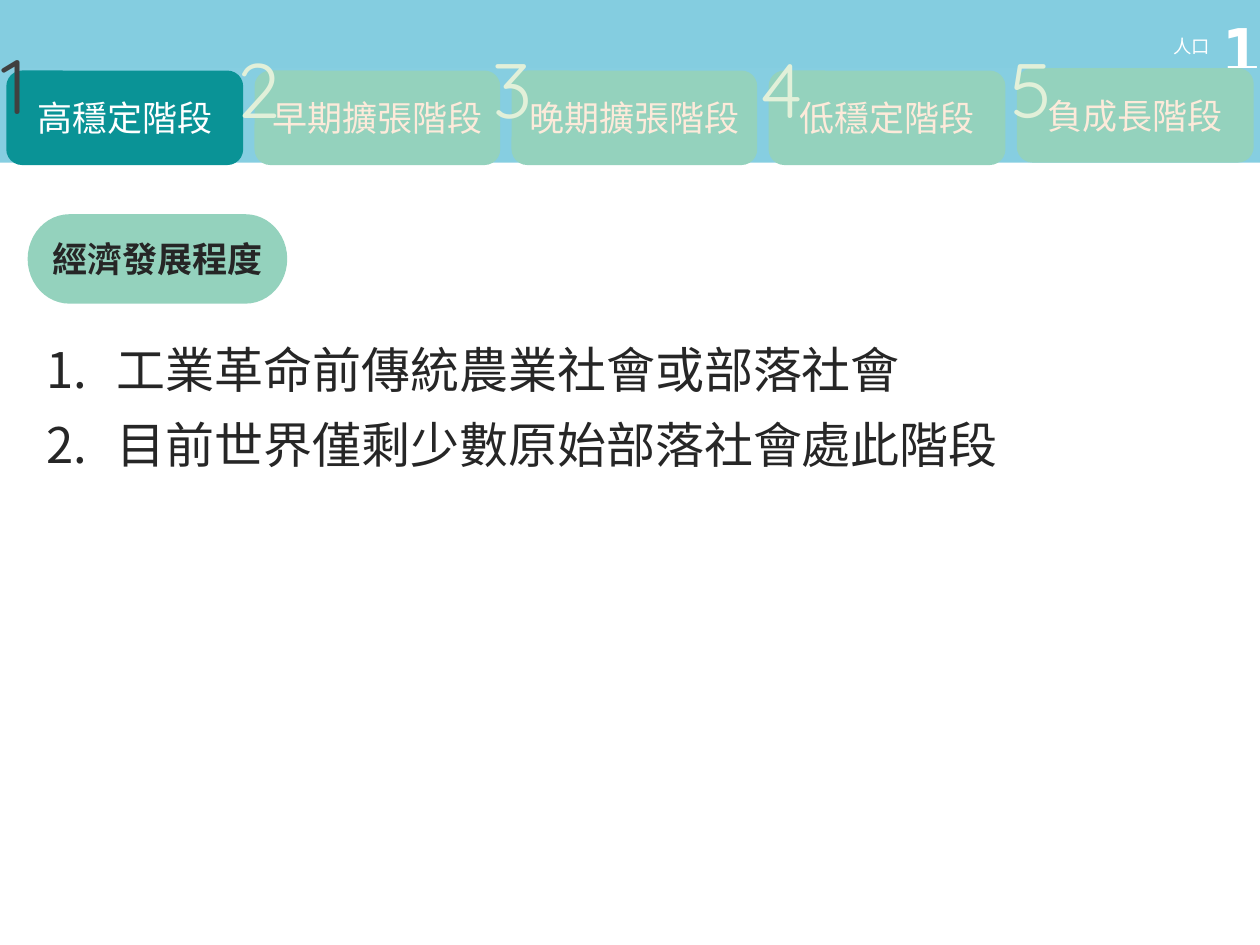
from lxml import etree
from pptx import Presentation
from pptx.dml.color import RGBColor
from pptx.enum import shapes, text
from pptx.oxml import ns
from pptx.util import Inches, Pt

COLORS = {
    "band": "51B9D4", "strip": "86CEE1", "active": "0A9396", "mint": "94D2BD",
    "white": "FFFFFF", "cream": "FDEADA", "pale": "E2F0D9",
    "gray": "404040", "ink": "262626",
}
CJK = "Noto Sans CJK SC"
RECTANGLE = shapes.MSO_SHAPE.RECTANGLE
ROUNDED = shapes.MSO_SHAPE.ROUNDED_RECTANGLE
PILL = shapes.MSO_SHAPE.FLOWCHART_TERMINATOR
ALIGN = text.PP_ALIGN
TABS = [
    ("高穩定階段", 1.88, 0.02, -0.14, -0.31),
    ("早期擴張階段", 1.95, 0.02, -0.24, -0.28),
    ("晚期擴張階段", 1.95, 0.02, -0.25, -0.28),
    ("低穩定階段", 1.88, 0.02, -0.16, -0.28),
    ("負成長階段", 1.88, 0, -0.15, -0.26),
]
POINTS = ["工業革命前傳統農業社會或部落社會", "目前世界僅剩少數原始部落社會處此階段"]


def add_child(parent, tag, **attributes):
    return etree.SubElement(parent, ns.qn(tag), attributes)


def write(paragraph, content, size, color, font=CJK, bold=False, align=ALIGN.LEFT, spacing=None):
    paragraph.alignment = align
    run = paragraph.add_run()
    run.text = content
    run.font.size = Pt(size)
    run.font.bold = bold
    run.font.name = font
    run.font.color.rgb = RGBColor.from_string(COLORS[color])
    properties = run._r.get_or_add_rPr()
    add_child(properties, "a:ea", typeface=CJK)
    if spacing:
        properties.set("spc", str(int(spacing * 100)))


def add_block(slide, kind, left, top, width, height, color, alpha=None):
    shape = slide.shapes.add_shape(kind, Inches(left), Inches(top), Inches(width), Inches(height))
    shape.shadow.inherit = False
    shape.fill.solid()
    shape.fill.fore_color.rgb = RGBColor.from_string(COLORS[color])
    shape.line.fill.background()
    if alpha:
        fill_color = shape._element.spPr.find(ns.qn("a:solidFill"))[0]
        add_child(fill_color, "a:alpha", val=str(alpha * 1000))
    shape.text_frame.word_wrap = False
    shape.text_frame.vertical_anchor = text.MSO_ANCHOR.MIDDLE
    return shape


def add_text_frame(slide, left, top, width, height):
    box = slide.shapes.add_textbox(Inches(left), Inches(top), Inches(width), Inches(height))
    box.text_frame.word_wrap = True
    return box.text_frame


def add_header(slide, left, top, width):
    add_block(slide, RECTANGLE, left, top, width, 0.59, "band", alpha=70)
    page = add_text_frame(slide, left + width - 0.57, top - 0.04, 0.84, 0.93)
    page.vertical_anchor = text.MSO_ANCHOR.MIDDLE
    page.margin_left = page.margin_right = Inches(0.07)
    page.margin_top = page.margin_bottom = Inches(0.04)
    write(page.paragraphs[0], "1", 36, "white", font="DejaVu Sans Mono", bold=True,
          align=ALIGN.CENTER, spacing=4.5)
    topic = add_text_frame(slide, left + width - 1.6, top + 0.26, 1.3, 0.28)
    write(topic.paragraphs[0], "人口", 10.5, "white", align=ALIGN.RIGHT)


def add_tabs(slide, left, top, width, height, active=0, gap=0.09):
    add_block(slide, RECTANGLE, left, top, width, height, "strip")
    tab_left = left + 0.05
    numbers = []
    for index, (label, tab_width, drop, shift, rise) in enumerate(TABS):
        is_active = index == active
        tab_top = top + drop
        tab = add_block(slide, ROUNDED, tab_left, tab_top, tab_width, height,
                        "active" if is_active else "mint")
        write(tab.text_frame.paragraphs[0], label, 20,
              "white" if is_active else "cream", align=ALIGN.CENTER)
        numbers.append((tab_left + shift, tab_top + rise, "gray" if is_active else "pale"))
        tab_left += tab_width + gap
    for number, (number_left, number_top, color) in enumerate(numbers, 1):
        frame = add_text_frame(slide, number_left, number_top, 0.35, 0.84)
        write(frame.paragraphs[0], str(number), 44, color, font="Quicksand")


def add_heading(slide, left, top, width, height):
    pill = add_block(slide, PILL, left, top, width, height, "mint")
    write(pill.text_frame.paragraphs[0], "經濟發展程度", 20, "ink", font="Arial",
          bold=True, align=ALIGN.CENTER)


def add_points(slide, left, top, width, height):
    frame = add_text_frame(slide, left, top, width, height)
    for index, point in enumerate(POINTS):
        paragraph = frame.add_paragraph() if index else frame.paragraphs[0]
        properties = paragraph._p.get_or_add_pPr()
        properties.set("marL", str(Inches(0.56)))
        properties.set("indent", str(Inches(-0.56)))
        add_child(properties, "a:buFont", typeface=CJK)
        add_child(properties, "a:buAutoNum", type="arabicPeriod")
        paragraph.line_spacing = 1.1
        paragraph.space_before = Pt(6 if index else 0)
        write(paragraph, point, 28, "ink", font="Calibri", align=ALIGN.JUSTIFY)


def main():
    presentation = Presentation()
    presentation.slide_width = Inches(10)
    presentation.slide_height = Inches(7.5)
    slide = presentation.slides.add_slide(presentation.slide_layouts[6])
    add_header(slide, 0, -0.03, 10)
    add_heading(slide, 0.22, 1.7, 2.06, 0.71)
    add_tabs(slide, 0, 0.54, 10, 0.75)
    add_points(slide, 0.27, 2.6, 8.91, 0.72)
    presentation.save("out.pptx")


if __name__ == "__main__":
    main()
